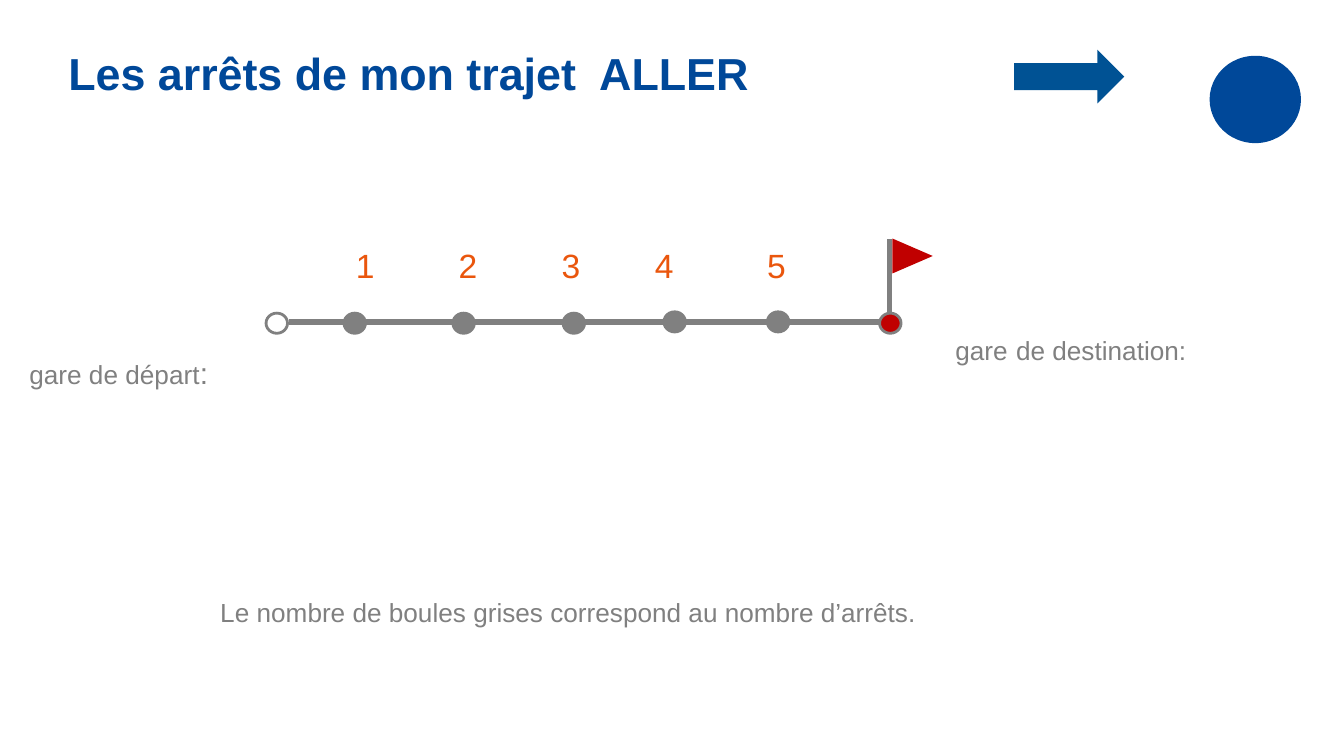
from lxml.etree import SubElement
from pptx import Presentation
from pptx.dml.color import RGBColor
from pptx.enum.shapes import MSO_CONNECTOR, MSO_SHAPE as SHAPE
from pptx.oxml.ns import qn
from pptx.util import Pt

PX = 4572  # 200 px to the inch
BLUE = RGBColor(0x00, 0x48, 0x99)
ARROW_BLUE = RGBColor(0x00, 0x52, 0x94)
GREY = RGBColor(0x80, 0x80, 0x80)
RED = RGBColor(0xC0, 0x00, 0x00)
ORANGE = RGBColor(0xEA, 0x56, 0x0D)
WHITE = RGBColor(0xFF, 0xFF, 0xFF)

# Content: box, runs of (text, size), colour, bold
TITLE = ((82, 58, 1782, 156), [("Les arrêts de mon trajet  ALLER", 24)], BLUE, True)
LABELS = [
    ((24, 518, 744, 74), [("gare de départ", 14), (":", 16)], GREY, False),
    ((1402, 482, 430, 122), [("gare", 14), (" ", 16), ("de destination:", 14)], GREY, False),
    ((308, 878, 1276, 114),
     [("Le nombre de boules grises correspond au nombre d’arrêts.", 14)], GREY, False),
]
NUMBERS = ((510, 355, 740, 80), [("1\t2\t3\t4\t5", 18)], ORANGE, False)
NUMBER_TABS = [153, 306, 445, 612]

# Balls of the line: left, top, fill
BALL = (32, 30)
BALLS = [(512, 466, GREY), (674, 466, GREY), (838, 466, GREY), (988, 464, GREY),
         (1142, 464, GREY), (1309, 466, RED), (396, 466, WHITE)]
LINES = [(1324, 356, 1324, 466), (430, 479, 1310, 479)]  # flagpole, track


def scale(values):
    return [v * PX for v in values]


def add_shape(kind, box, fill, outline=None, rotation=0):
    sp = slide.shapes.add_shape(kind, *scale(box))
    sp.shadow.inherit = False
    sp.rotation = rotation
    sp.fill.solid()
    sp.fill.fore_color.rgb = fill
    if outline is None:
        sp.line.fill.background()
    else:
        sp.line.color.rgb = outline
        sp.line.width = Pt(1.5)


def add_line(ends):
    line = slide.shapes.add_connector(MSO_CONNECTOR.STRAIGHT, *scale(ends))
    line.line.color.rgb = GREY
    line.line.width = Pt(3)
    SubElement(line._element.spPr, qn("a:effectLst"))


def add_text(box, runs, color, bold, tabs=()):
    tf = slide.shapes.add_textbox(*scale(box)).text_frame
    tf.word_wrap = True
    p = tf.paragraphs[0]
    if tabs:
        tab_list = SubElement(p._p.get_or_add_pPr(), qn("a:tabLst"))
        for pos in scale(tabs):
            SubElement(tab_list, qn("a:tab"), pos=str(pos), algn="l")
    for text, size in runs:
        r = p.add_run()
        r.text = text
        r.font.color.rgb = color
        for name, value in {"name": "Arial", "size": Pt(size), "bold": bold}.items():
            setattr(r.font, name, value)


prs = Presentation()
prs.slide_width, prs.slide_height = scale((2000, 1125))
slide = prs.slides.add_slide(prs.slide_layouts[6])

# Flag and flagpole, title, track
add_shape(SHAPE.ISOSCELES_TRIANGLE, (1332, 351, 52, 60), RED, rotation=90)
add_text(*TITLE)
for ends in LINES:
    add_line(ends)

# Stops and direction arrow
for left, top, fill in BALLS:
    add_shape(SHAPE.FLOWCHART_CONNECTOR, (left, top, *BALL), fill, GREY)
add_shape(SHAPE.RIGHT_ARROW, (1509, 74, 164, 80), ARROW_BLUE)

# Labels, disc and stop numbers
for label in LABELS:
    add_text(*label)
add_shape(SHAPE.OVAL, (1800, 83, 136, 130), BLUE)
add_text(*NUMBERS, tabs=NUMBER_TABS)

prs.save("out.pptx")
